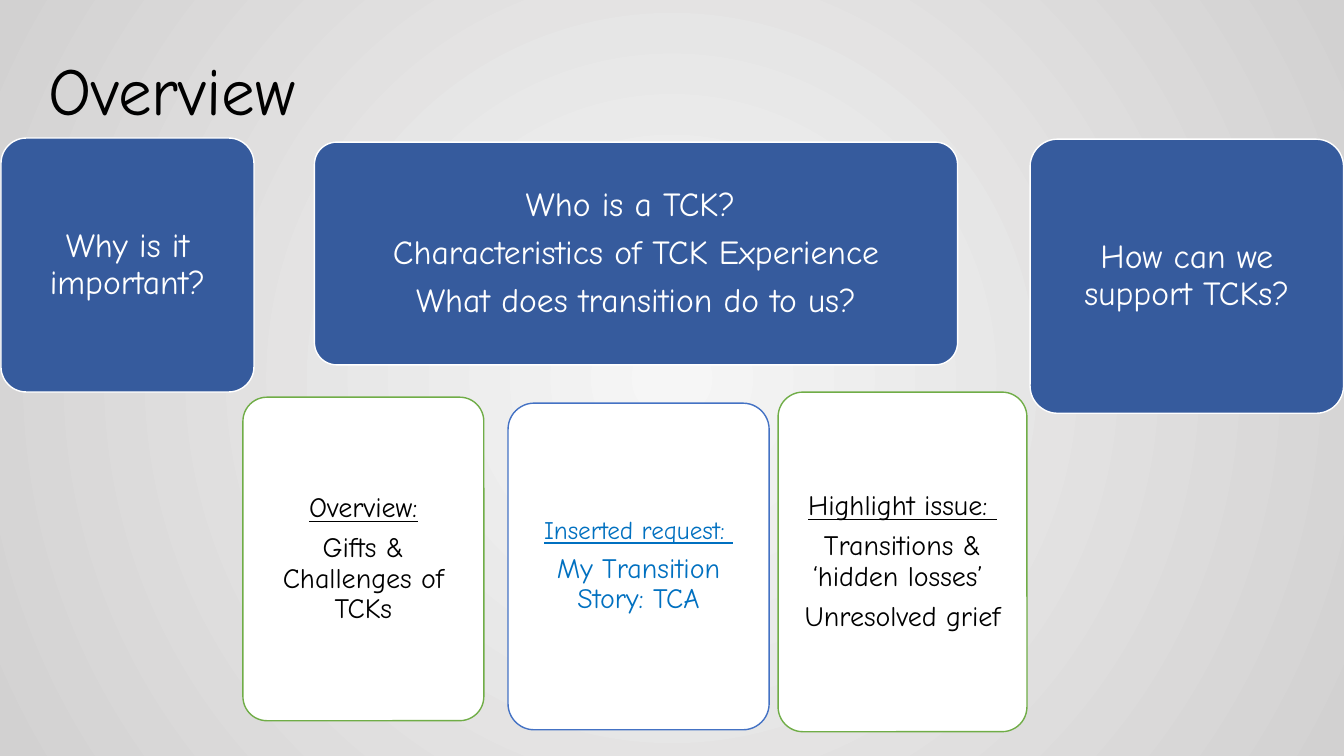
from lxml import etree
from pptx import Presentation
from pptx.dml.color import RGBColor
from pptx.enum.shapes import MSO_SHAPE
from pptx.enum.text import MSO_ANCHOR, PP_ALIGN
from pptx.oxml.ns import qn
from pptx.util import Pt

ROUNDED = MSO_SHAPE.ROUNDED_RECTANGLE
MIDDLE = MSO_ANCHOR.MIDDLE
CENTER, LEFT = PP_ALIGN.CENTER, PP_ALIGN.LEFT

COLORS = {
    "blue": "365B9D",
    "outline_blue": "4472C4",
    "green": "70AD47",
    "request": "0070C0",
    "white": "FFFFFF",
    "black": "000000",
    "bg_center": "F6F6F6",
    "bg_edge": "D2D1D1",
}


def rgb(name):
    return RGBColor.from_string(COLORS[name])


def write(p, text, size=24, color="black", underline=False,
          align=CENTER, after=0.35):
    p.alignment = align
    p.line_spacing = 0.9
    p.space_after = Pt(round(size * after, 1))
    r = p.add_run()
    r.text = text
    r.font.name = "Comic Neue"
    r.font.size = Pt(size)
    r.font.underline = underline
    r.font.color.rgb = rgb(color)


class Deck:
    def __init__(self, width, height):
        self.prs = Presentation()
        self.prs.slide_width = Pt(width)
        self.prs.slide_height = Pt(height)
        self.s = self.prs.slides.add_slide(self.prs.slide_layouts[6])

    def radial_background(self, center, edge):
        fill = self.s.background.fill
        fill.gradient()
        for stop, position, color in zip(fill.gradient_stops, (0, 1), (center, edge)):
            stop.position = position
            stop.color.rgb = rgb(color)
        grad = fill._xPr.find(qn("a:gradFill"))
        path = etree.Element(qn("a:path"), path="circle")
        etree.SubElement(path, qn("a:fillToRect"),
                         l="50000", t="50000", r="50000", b="50000")
        grad.replace(grad.find(qn("a:lin")), path)

    def title(self, text, box):
        sp = self.s.shapes.add_textbox(*map(Pt, box))
        tf = sp.text_frame
        tf.word_wrap = True
        tf.vertical_anchor = MIDDLE
        write(tf.paragraphs[0], text, size=48, align=LEFT, after=0)

    def card(self, box, lines, fill="white", line="white", inset=6, **style):
        sp = self.s.shapes.add_shape(ROUNDED, *map(Pt, box))
        sp.adjustments[0] = 0.1
        sp.shadow.inherit = False
        sp.fill.solid()
        sp.fill.fore_color.rgb = rgb(fill)
        sp.line.color.rgb = rgb(line)
        sp.line.width = Pt(1)
        tf = sp.text_frame
        tf.word_wrap = True
        tf.vertical_anchor = MIDDLE
        tf.margin_left = tf.margin_right = Pt(inset)
        tf.margin_top = tf.margin_bottom = Pt(inset)
        for i, text in enumerate(lines):
            p = tf.add_paragraph() if i else tf.paragraphs[0]
            write(p, text, **style)
        return tf

    def topic(self, box, *lines):
        self.card(box, lines, fill="blue", inset=7.2, color="white")

    def detail(self, box, heading, *lines, line="green", color="black",
               heading_size=20, inset=6):
        tf = self.card(box, [heading], line=line, inset=inset,
                       size=heading_size, color=color, underline=True)
        for text in lines:
            write(tf.add_paragraph(), text, size=20, color=color)


def main():
    deck = Deck(960, 540)
    deck.radial_background("bg_center", "bg_edge")
    deck.title("Overview", (27.4, 15.1, 828, 104.4))
    deck.topic((0.7, 98.6, 180.7, 181.4), "Why is it important?")
    deck.topic((224.6, 101.5, 459.4, 159.1), "Who is a TCK? ",
               "Characteristics of TCK Experience",
               "What does transition do to us?")
    deck.detail((173.5, 283.7, 172.1, 231.1), "Overview:",
                "Gifts & Challenges of TCKs")
    deck.detail((555.8, 280.1, 177.8, 242.6), "Highlight issue: ",
                "Transitions & ‘hidden losses’ ", "Unresolved grief")
    deck.detail((362.9, 288, 186.5, 233.3), "Inserted request: ",
                "My Transition Story: TCA", line="outline_blue",
                color="request", heading_size=18, inset=5)
    deck.topic((735.8, 99.4, 223.9, 195.8), "How can we support TCKs?")
    deck.prs.save("out.pptx")


if __name__ == "__main__":
    main()
